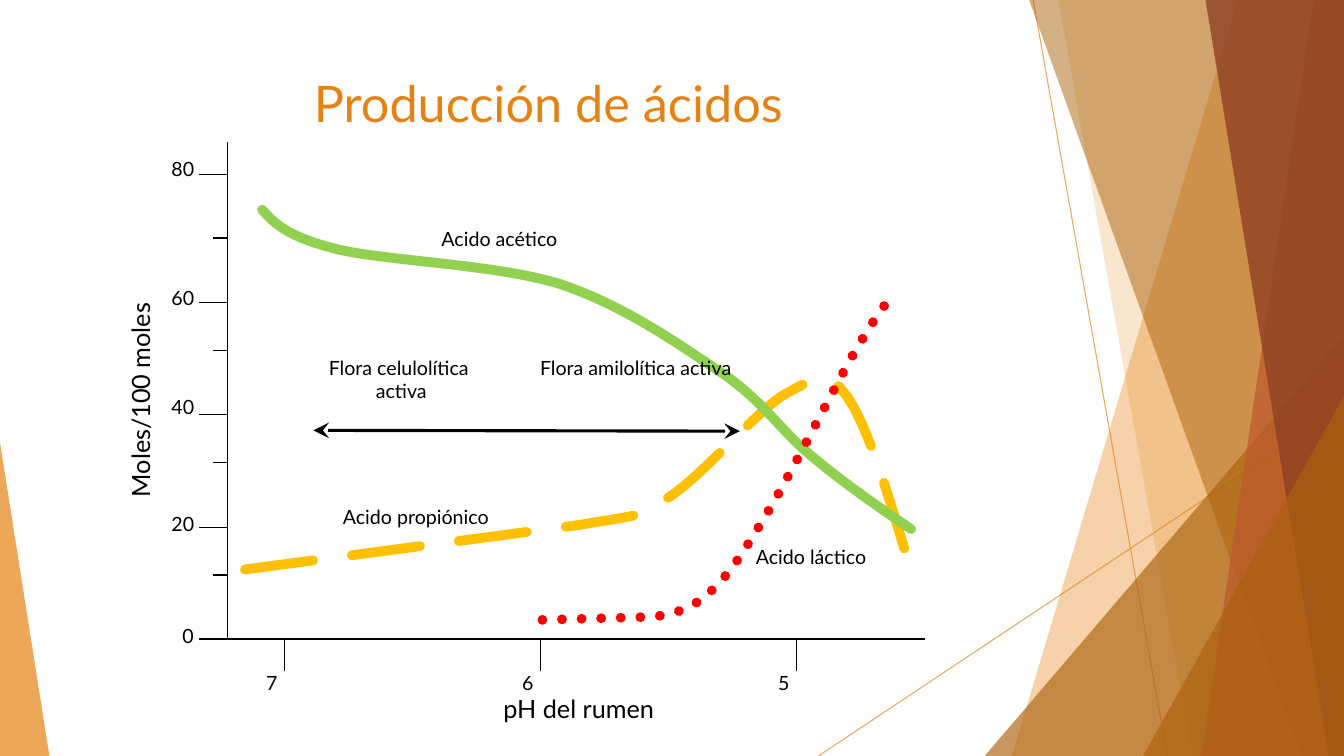
"""Slide on acid production against rumen pH, with curves drawn by hand."""
import pptx
import pptx.util
import pptx.dml.color
import pptx.enum.dml
import pptx.enum.shapes
import pptx.enum.text
import pptx.oxml.ns
from lxml import etree

Pt = pptx.util.Pt
RGB = pptx.dml.color.RGBColor
DASH = pptx.enum.dml.MSO_LINE
KIND = pptx.enum.shapes.MSO_SHAPE
ALIGN = pptx.enum.text.PP_ALIGN
LEFT, MID = ALIGN.LEFT, ALIGN.CENTER
qn = pptx.oxml.ns.qn

ORANGE = RGB(0xE4, 0x83, 0x12)
BRONZE = RGB(0xAB, 0x62, 0x0D)
RUST = RGB(0xBD, 0x58, 0x2C)
BROWN = RGB(0x8E, 0x42, 0x21)
GOLD = RGB(0xFF, 0xC0, 0x00)
GREEN = RGB(0x92, 0xD0, 0x50)
RED = RGB(0xFF, 0x00, 0x00)
BLACK = RGB(0x00, 0x00, 0x00)

deck = pptx.Presentation()
deck.slide_width, deck.slide_height = Pt(960), Pt(540)
shapes = deck.slides.add_slide(deck.slide_layouts[6]).shapes


def link(x1, y1, x2, y2, tint=BLACK, width=1):
    line = shapes.add_connector(
        pptx.enum.shapes.MSO_CONNECTOR.STRAIGHT, Pt(x1), Pt(y1), Pt(x2), Pt(y2))
    line.line.color.rgb = tint
    line.line.width = Pt(width)
    etree.SubElement(line._element.spPr, qn("a:effectLst"))
    return line


def write(lines, x, y, width, height, align=LEFT, size=14, tint=BLACK):
    box = shapes.add_textbox(Pt(x), Pt(y), Pt(width), Pt(height))
    frame = box.text_frame
    frame.word_wrap = True
    for i, text in enumerate(lines):
        para = frame.add_paragraph() if i else frame.paragraphs[0]
        para.alignment = align
        run = para.add_run()
        run.text = text
        run.font.name = "Lato"
        run.font.size = Pt(size)
        run.font.color.rgb = tint
    return box


faded = [
    (link(738, 0, 833.8, 540, ORANGE, 0.75), 70),
    (link(960, 290.2, 584.6, 540, ORANGE, 0.75), 70),
]

shards = [
    ("band", 884.2, 722.9, ORANGE, 36),
    ("band", 756, 851.8, ORANGE, 20),
    ("peak", 703.4, 239.8, BRONZE, 66),
    ("band", 735.1, 929.5, BRONZE, 50),
    ("band", 938.2, 858.2, RUST, 70),
    ("band", 861.1, 949, BROWN, 80),
    ("peak", 816.5, 283, BRONZE, 66),
    ("edge", 35.3, 316.1, ORANGE, 70),
]
for form, a, b, tint, alpha in shards:
    if form == "band":
        pen = shapes.build_freeform(Pt(a), 0)
        pen.add_line_segments(
            [(Pt(960), 0), (Pt(960), Pt(540)), (Pt(b), Pt(540))], close=True)
        shard = pen.convert_to_shape()
    else:
        left, right = (a, 960) if form == "peak" else (0, a)
        shard = shapes.add_shape(
            KIND.ISOSCELES_TRIANGLE, Pt(left), Pt(b), Pt(right - left), Pt(540 - b))
        shard.adjustments[0] = 1 if form == "peak" else 0
    shard.shadow.inherit = False
    shard.fill.solid()
    shard.fill.fore_color.rgb = tint
    shard.line.fill.background()
    faded.append((shard, alpha))

for shape, alpha in faded:
    clear = next(shape._element.spPr.iter(qn("a:srgbClr")))
    etree.SubElement(clear, qn("a:alpha"), val=str(alpha * 1000))

write(["Producción de ácidos"], 53.3, 48.2, 676.8, 59.8, MID, 36, ORANGE)

AXIS, BASE, STEP = 162.7, 456.5, 182.9
link(AXIS, 101.5, AXIS, BASE)
link(AXIS, BASE, 660.5, BASE)
for i in range(3):
    x = 203.2 + i * STEP
    link(x, BASE, x, 479.5)
    write([str(7 - i)], x - 20.2, 475.9, 40.3, 49.7)
for y in (BASE, 376.6, 295.9, 216, 124.6):
    link(AXIS, y, 142.4, y)
for y in (410.6, 330.5, 250.4, 170.1):
    link(AXIS, y, 152.4, y)

curves = [
    (GOLD, DASH.LONG_DASH, [
        (175, 406.8), (413.3, 375.1),
        (463.7, 366.5), (453.6, 370.1), (478.1, 355),
        (502.6, 339.1), (540, 293.8), (560.9, 281.5),
        (582.5, 270), (590.4, 262.8), (604.8, 283),
        (619.9, 303.8), (635, 355), (650.2, 406.1)]),
    (GREEN, DASH.SOLID, [
        (187.2, 149.8), (195.8, 159.1), (203.8, 168.5), (239.8, 177.8),
        (275, 186.5), (354.2, 188.6), (400.3, 203),
        (446.4, 218.2), (487.4, 247.7), (517.7, 267.8),
        (547.2, 288.7), (558, 308.2), (580.3, 326.2),
        (602.6, 344.9), (626.4, 361.4), (650.9, 378)]),
    (RED, DASH.ROUND_DOT, [
        (387.4, 442.8), (467.3, 440.6),
        (487.4, 437), (494.6, 434.2), (508.3, 421.9),
        (521.3, 409.7), (530.6, 395.3), (547.2, 367.9),
        (563.8, 340.6), (593.3, 282.2), (607.7, 256.3),
        (622.8, 230.4), (629.3, 221), (636.5, 212.4)]),
]
for tint, dash, knots in curves:
    (x, y), *rest = [(Pt(h), Pt(v)) for h, v in knots]
    pen = shapes.build_freeform(x, y)
    pen.add_line_segments(rest, close=False)
    curve = pen.convert_to_shape()
    legs = list(curve._element.spPr.iter(qn("a:lnTo")))
    legs = legs[len(legs) % 3:]
    for k in range(0, len(legs), 3):
        bend = etree.SubElement(legs[k].getparent(), qn("a:cubicBezTo"))
        for leg in legs[k:k + 3]:
            bend.append(leg[0])
            leg.getparent().remove(leg)
    curve.shadow.inherit = False
    curve.fill.background()
    curve.line.color.rgb = tint
    curve.line.width = Pt(7)
    curve.line.dash_style = dash
    stroke = curve.line._get_or_add_ln()
    stroke.set("cap", "rnd")
    etree.SubElement(stroke, qn("a:round"))

arrow = link(223.9, 307.4, 528.5, 308, width=2.25)
for end in ("a:headEnd", "a:tailEnd"):
    etree.SubElement(
        arrow.line._get_or_add_ln(), qn(end), type="stealth", w="lg", len="lg")

labels = [
    (["Acido acético"], 234.7, 158.4, 244.1, 49.7, MID),
    (["Acido propiónico"], 175, 357.1, 244.1, 49.7, MID),
    (["Acido láctico"], 532.8, 385.5, 244.1, 49.7, LEFT),
    (["80"], 115.4, 108.7, 71.3, 49.7, LEFT),
    (["60"], 115.4, 200.9, 71.3, 49.7, LEFT),
    (["40"], 115.4, 278.6, 71.3, 49.7, LEFT),
    (["20"], 115.4, 362.2, 41, 30.2, LEFT),
    (["0"], 123.1, 442.1, 71.3, 49.7, LEFT),
    (["Flora celulolítica ", "activa"], 205, 250.6, 163.4, 41, MID),
    (["Flora amilolítica activa"], 376.4, 250.6, 155.5, 51.8, MID),
    (["pH del rumen"], 160, 491.8, 506.9, 36.7, MID, 18),
]
for label in labels:
    write(*label)
side = write(["Moles/100 moles"], -72.7, 266.6, 355, 38.2, MID, 18)
side.rotation = 270

deck.save("out.pptx")
